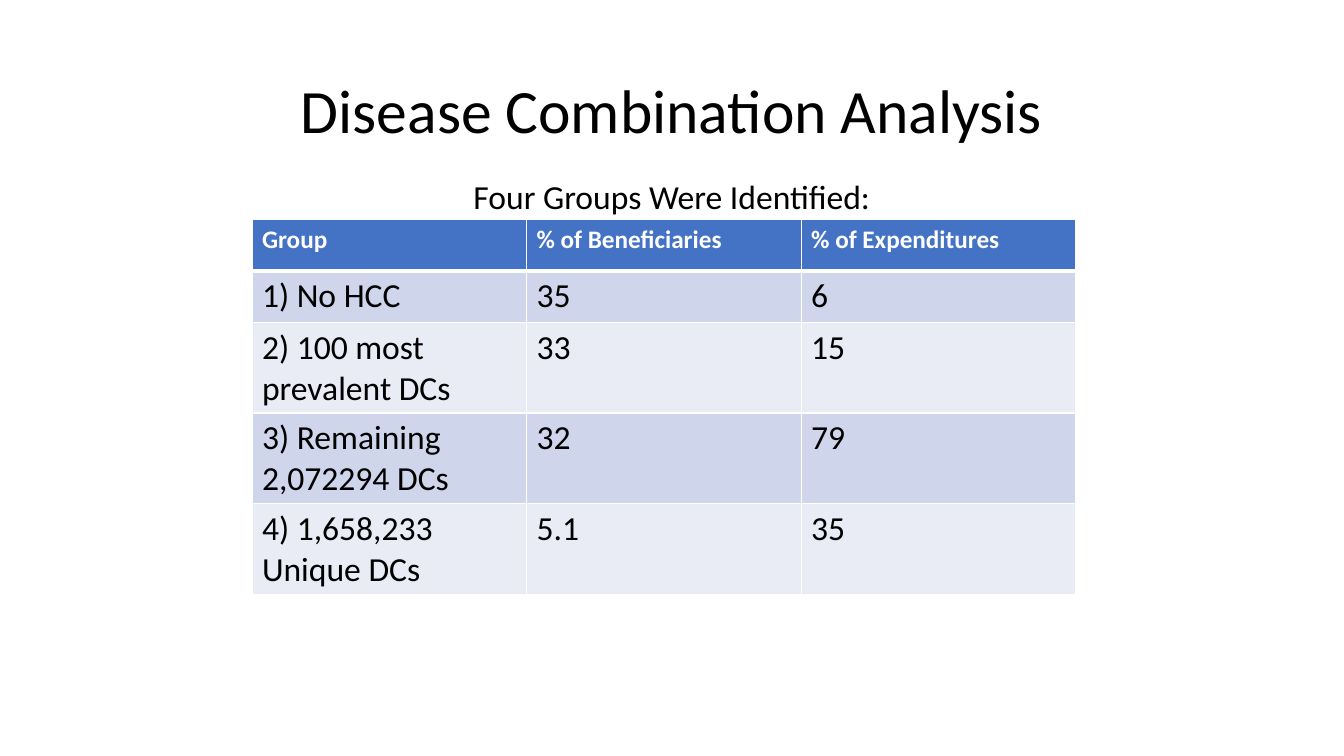
from dataclasses import dataclass

from lxml.etree import SubElement
from pptx import Presentation
from pptx.dml.color import RGBColor
from pptx.enum.text import MSO_ANCHOR, PP_ALIGN
from pptx.oxml.ns import qn
from pptx.util import Cm, Pt


@dataclass(frozen=True)
class Theme:
    """Font, type sizes and colours of the slide."""
    font: str = "Calibri"
    title_size: int = 44
    body_size: int = 24
    header_size: int = 18
    text: str = "000000"
    white: str = "FFFFFF"
    header_fill: str = "4472C4"
    bands: tuple = ("CFD5EA", "E9EBF5")


THEME = Theme()
ROWS = [
    ("Group", "% of Beneficiaries", "% of Expenditures"),
    ("1) No HCC", "35", "6"),
    ("2) 100 most prevalent DCs", "33", "15"),
    ("3) Remaining 2,072294 DCs", "32", "79"),
    ("4) 1,658,233 Unique DCs", "5.1", "35"),
]
ROW_HEIGHTS = [Cm(1.3)] * 2 + [Cm(2.24)] * 3
COLUMN_WIDTH = Cm(6.92)


def style_paragraph(p, size, color=THEME.text, bold=False):
    """Set the font of a whole paragraph."""
    p.font.name = THEME.font
    p.font.size = Pt(size)
    p.font.bold = bold
    p.font.color.rgb = RGBColor.from_string(color)


def write_centered(sp, text, size):
    """Fill a shape with one centred, tightly spaced line of text."""
    tf = sp.text_frame
    tf.word_wrap = True
    tf.text = text
    p = tf.paragraphs[0]
    p.alignment = PP_ALIGN.CENTER
    p.line_spacing = 0.9
    style_paragraph(p, size)


def add_title(s, text):
    """Place and format the title placeholder."""
    sp = s.shapes.title
    sp.left, sp.top, sp.width, sp.height = Cm(2.33), Cm(1.02), Cm(29.21), Cm(3.68)
    sp.text_frame.vertical_anchor = MSO_ANCHOR.MIDDLE
    write_centered(sp, text, THEME.title_size)


def add_lead_in(s, text):
    """Add the line that introduces the table."""
    sp = s.shapes.add_textbox(Cm(5.5), Cm(4.42), Cm(22.86), Cm(12.19))
    write_centered(sp, text, THEME.body_size)


def set_borders(cell, widths):
    """Draw white borders of the given point widths around a cell."""
    tc_pr = cell._tc.get_or_add_tcPr()
    for side, width in widths.items():
        ln = SubElement(tc_pr, qn(f"a:ln{side}"), w=str(Pt(width)))
        fill = SubElement(ln, qn("a:solidFill"))
        SubElement(fill, qn("a:srgbClr"), val=THEME.white)


def fill_cell(cell, text, row):
    """Write and format one cell according to its row."""
    header = row == 0
    cell.text = text
    p = cell.text_frame.paragraphs[0]
    if header:
        style_paragraph(p, THEME.header_size, THEME.white, bold=True)
    else:
        style_paragraph(p, THEME.body_size)
    set_borders(cell, {"L": 1, "R": 1, "T": 3 if row == 1 else 1, "B": 3 if header else 1})
    color = THEME.header_fill if header else THEME.bands[(row - 1) % 2]
    cell.fill.solid()
    cell.fill.fore_color.rgb = RGBColor.from_string(color)


def add_group_table(s, rows):
    """Add the table of disease groups."""
    columns = len(rows[0])
    table = s.shapes.add_table(len(rows), columns, Cm(6.35), Cm(5.52),
                               COLUMN_WIDTH * columns, sum(ROW_HEIGHTS)).table
    for column in table.columns:
        column.width = COLUMN_WIDTH
    for i, (values, height) in enumerate(zip(rows, ROW_HEIGHTS)):
        table.rows[i].height = height
        for j, value in enumerate(values):
            fill_cell(table.cell(i, j), value, i)


def main():
    """Build and save the slide."""
    prs = Presentation()
    prs.slide_width, prs.slide_height = Cm(33.87), Cm(19.05)
    s = prs.slides.add_slide(prs.slide_layouts.get_by_name("Title Only"))
    add_title(s, "Disease Combination Analysis")
    add_lead_in(s, "Four Groups Were Identified:")
    add_group_table(s, ROWS)
    prs.save("out.pptx")


if __name__ == "__main__":
    main()
